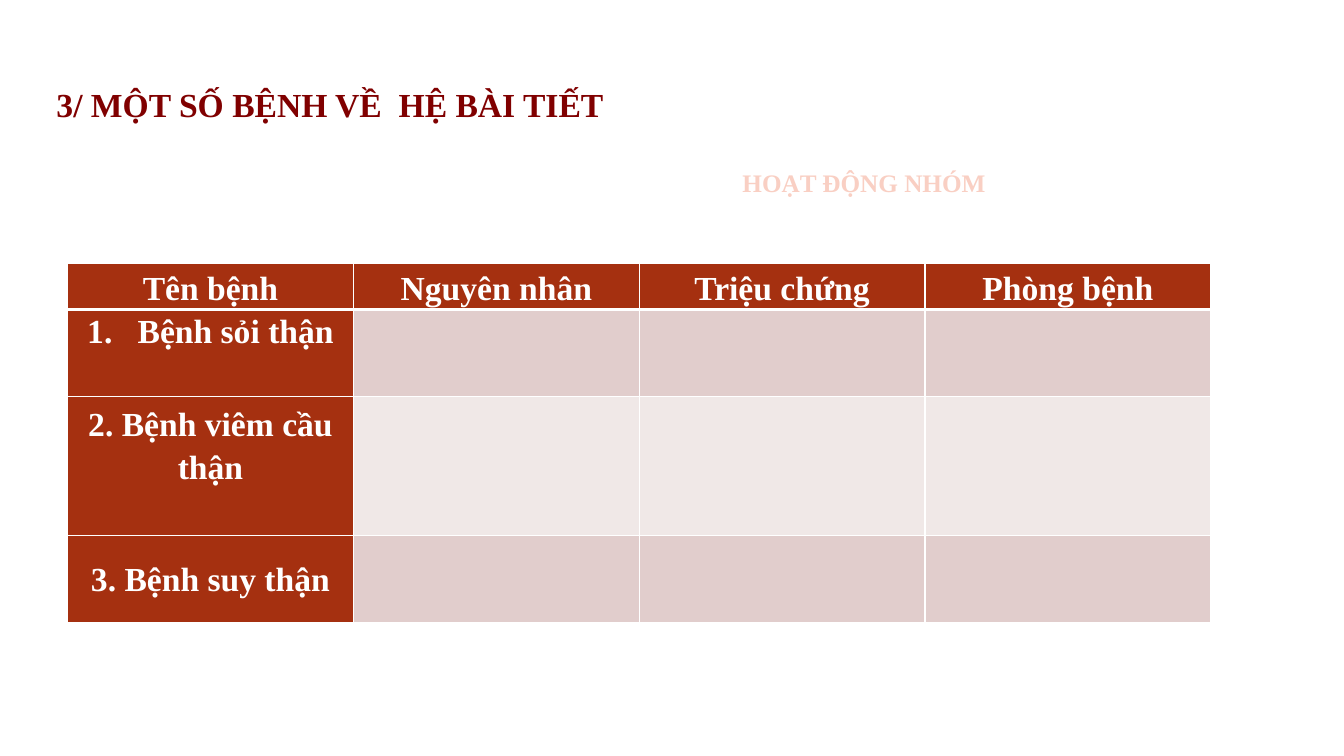
from dataclasses import dataclass

from lxml.etree import SubElement
from pptx import Presentation
from pptx.dml.color import RGBColor
from pptx.enum.text import MSO_ANCHOR, MSO_AUTO_SIZE, PP_ALIGN
from pptx.oxml.ns import qn
from pptx.util import Inches, Pt


@dataclass(frozen=True)
class Theme:
    font: str = "Times New Roman"
    heading: str = "800000"
    activity: str = "F9CFC3"
    header: str = "A53010"
    bands: tuple = ("E1CDCC", "F0E8E7")
    white: str = "FFFFFF"
    large: int = 24
    small: int = 18
    thin: int = 1
    thick: int = 3


THEME = Theme()

HEADERS = ("Tên bệnh", "Nguyên nhân", "Triệu chứng", "Phòng bệnh")
HEADER_HEIGHT = 0.45


@dataclass(frozen=True)
class Disease:
    name: str
    height: float
    spacing: float = 1.07
    anchor: MSO_ANCHOR = MSO_ANCHOR.MIDDLE
    top_margin: float = 0
    numbered: bool = False


DISEASES = (
    Disease("Bệnh sỏi thận", 0.86, anchor=MSO_ANCHOR.TOP, top_margin=0.02, numbered=True),
    Disease("2. Bệnh viêm cầu thận", 1.38, 1.15, MSO_ANCHOR.TOP, 0.05),
    Disease("3. Bệnh suy thận", 0.87),
)


def write(paragraph, words, size, color, align):
    paragraph.alignment = align
    run = paragraph.add_run()
    run.text = words
    run.font.name = THEME.font
    run.font.size = Pt(size)
    run.font.bold = True
    run.font.color.rgb = RGBColor.from_string(color)


def place_heading(slide, left, top, width, height):
    heading = slide.shapes.title
    heading.left, heading.top = Inches(left), Inches(top)
    heading.width, heading.height = Inches(width), Inches(height)
    frame = heading.text_frame
    frame.auto_size = MSO_AUTO_SIZE.NONE
    frame.vertical_anchor = MSO_ANCHOR.TOP
    write(frame.paragraphs[0], "3/ MỘT SỐ BỆNH VỀ  HỆ BÀI TIẾT",
          THEME.large, THEME.heading, PP_ALIGN.LEFT)


def place_activity(slide, left, top, width, height):
    activity = slide.shapes.add_textbox(
        Inches(left), Inches(top), Inches(width), Inches(height))
    frame = activity.text_frame
    frame.word_wrap = False
    write(frame.paragraphs[0], "HOẠT ĐỘNG NHÓM",
          THEME.small, THEME.activity, PP_ALIGN.CENTER)


def style_cell(cell, fill, top_line, bottom_line):
    edges = {"a:lnL": THEME.thin, "a:lnR": THEME.thin,
             "a:lnT": top_line, "a:lnB": bottom_line}
    properties = cell._tc.get_or_add_tcPr()
    for edge, weight in edges.items():
        line = SubElement(properties, qn(edge), w=str(Pt(weight)))
        SubElement(SubElement(line, qn("a:solidFill")), qn("a:srgbClr"), val=THEME.white)
    cell.fill.solid()
    cell.fill.fore_color.rgb = RGBColor.from_string(fill)


def write_label(cell, words, spacing=1.15, anchor=MSO_ANCHOR.MIDDLE, top_margin=0):
    cell.vertical_anchor = anchor
    cell.margin_left = cell.margin_right = Inches(0.07)
    cell.margin_top, cell.margin_bottom = Inches(top_margin), 0
    paragraph = cell.text_frame.paragraphs[0]
    paragraph.line_spacing = spacing
    write(paragraph, words, THEME.large, THEME.white, PP_ALIGN.CENTER)


def number(paragraph):
    """Give the paragraph an automatic number with a hanging indent."""
    properties = paragraph._p.get_or_add_pPr()
    properties.set("marL", str(Inches(0.5)))
    properties.set("indent", str(Inches(-0.5)))
    SubElement(properties, qn("a:buFont"), typeface="+mj-lt")
    SubElement(properties, qn("a:buAutoNum"), type="arabicPeriod")


def place_disease_table(slide, left, top, width):
    heights = [HEADER_HEIGHT] + [disease.height for disease in DISEASES]
    table = slide.shapes.add_table(
        len(heights), len(HEADERS), Inches(left), Inches(top),
        Inches(width), Inches(sum(heights))).table
    for column in table.columns:
        column.width = Inches(width / len(HEADERS))
    for row, height in zip(table.rows, heights):
        row.height = Inches(height)

    for column, words in enumerate(HEADERS):
        cell = table.cell(0, column)
        style_cell(cell, THEME.header, THEME.thin, THEME.thick)
        write_label(cell, words)

    for row, disease in enumerate(DISEASES, start=1):
        band = THEME.bands[(row - 1) % len(THEME.bands)]
        for column in range(len(HEADERS)):
            style_cell(table.cell(row, column), band if column else THEME.header,
                       THEME.thick if row == 1 else THEME.thin, THEME.thin)
        label = table.cell(row, 0)
        write_label(label, disease.name, disease.spacing, disease.anchor, disease.top_margin)
        if disease.numbered:
            number(label.text_frame.paragraphs[0])


def main():
    deck = Presentation()
    deck.slide_width, deck.slide_height = Inches(13.33), Inches(7.5)
    slide = deck.slides.add_slide(deck.slide_layouts.get_by_name("Title Only"))
    place_heading(slide, 0.46, 0.78, 12.34, 0.5)
    place_activity(slide, 7.25, 1.61, 2.64, 0.4)
    place_disease_table(slide, 0.67, 2.61, 11.34)
    deck.save("out.pptx")


if __name__ == "__main__":
    main()
